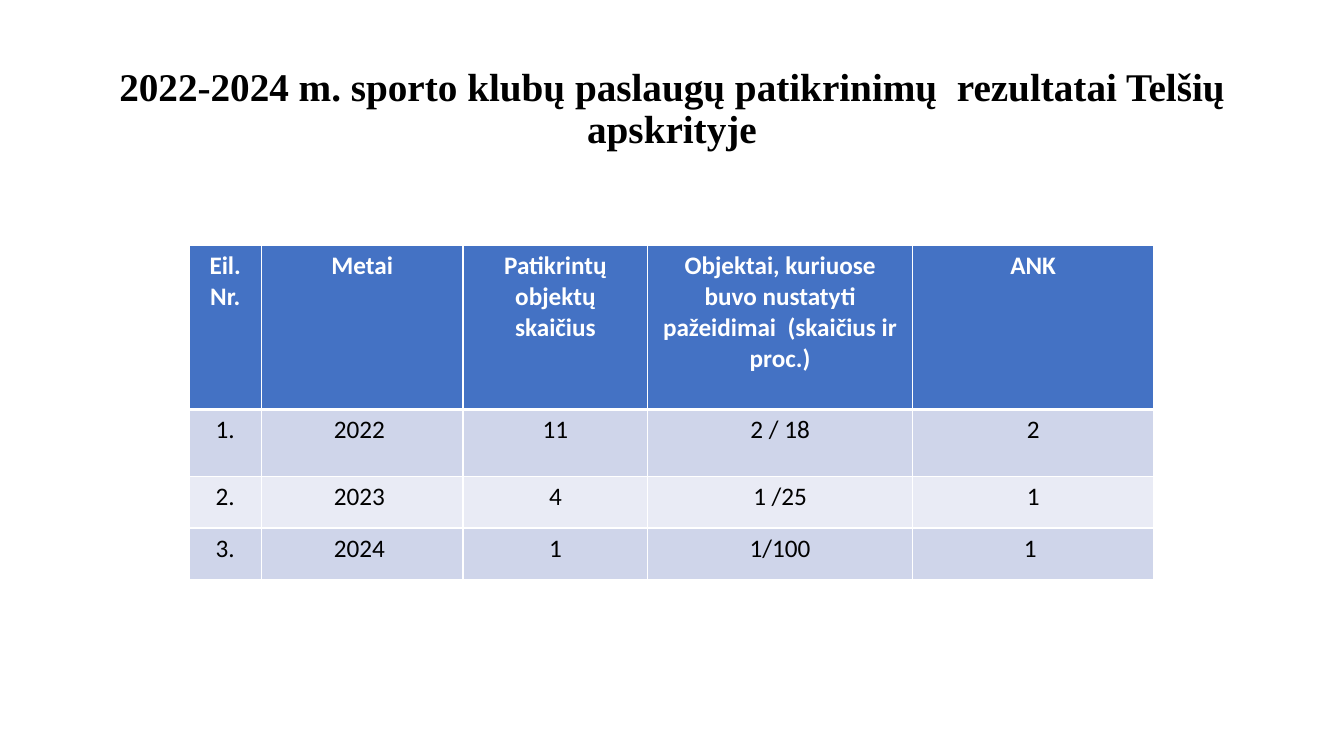
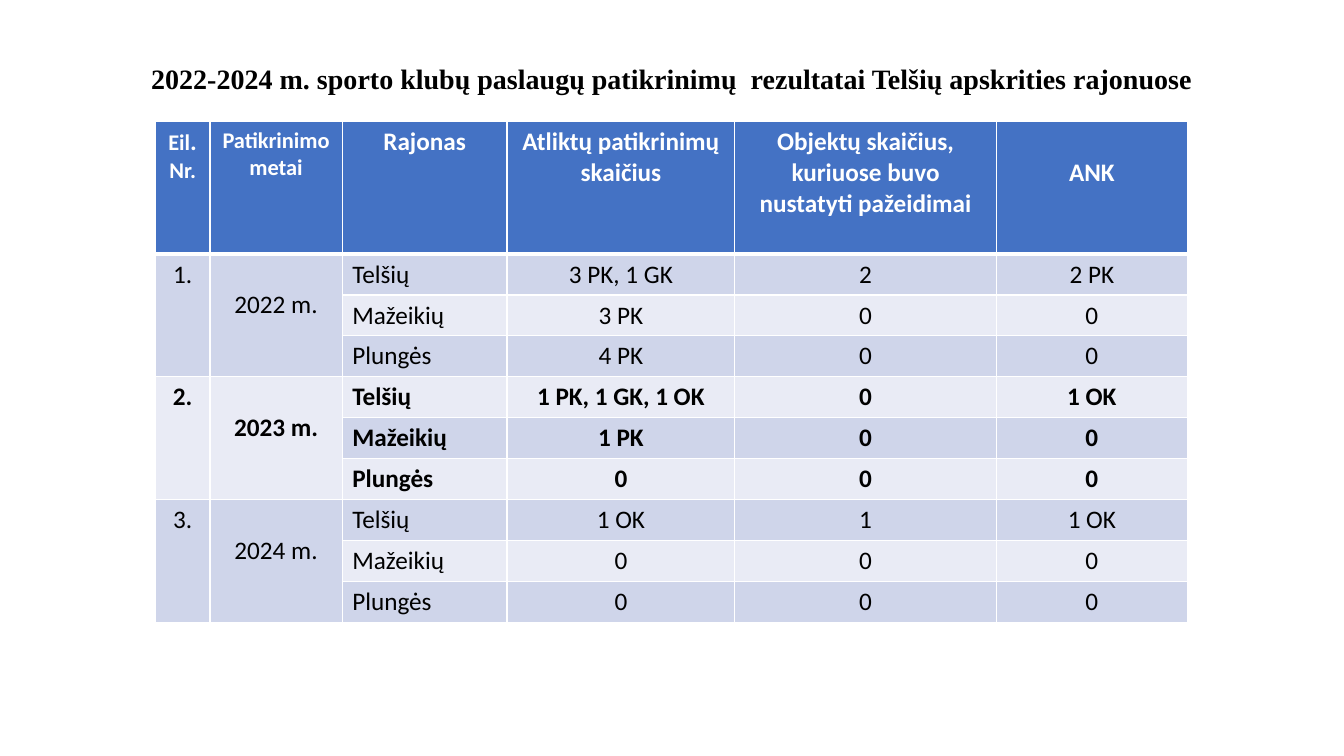
from lxml.etree import SubElement
from pptx import Presentation
from pptx.dml.color import RGBColor
from pptx.enum.text import MSO_ANCHOR as Anchor, PP_ALIGN as Align
from pptx.oxml.ns import qn
from pptx.util import Emu, Pt

EMU_PER_PX = 9525
COLORS = {
    "header": "4472C4",
    "band_dark": "CFD5EA",
    "band_light": "E9EBF5",
    "border": "FFFFFF",
    "header_text": "FFFFFF",
    "text": "000000",
}
TITLE_FONT = "Times New Roman"
TABLE_FONT = "Calibri"
TITLE_ONLY_LAYOUT = 5
LOWERED_MARGIN = 34
ROWS_PER_YEAR = 3

COUNTY_ROWS = [
    ["Eil. Nr.", "Metai", "Patikrintų objektų skaičius",
     "Objektai, kuriuose buvo nustatyti pažeidimai  (skaičius ir proc.)", "ANK"],
    ["1.", "2022 ", "11", "2 / 18", "2"],
    ["2.", "2023 ", "4", "1 /25", "1"],
    ["3.", "2024 ", "1", "1/100", "1 "],
]
DISTRICT_HEADER = [
    "Eil\nNr.", "Patikrinimo\nmetai", "Rajonas", "Atliktų patikrinimų skaičius",
    "Objektų skaičius, kuriuose buvo nustatyti pažeidimai", "ANK",
]
DISTRICT_ROWS = [
    ["1.", "2022 m.", "Telšių", "3 PK, 1 GK", "2", "2 PK"],
    ["", "", "Mažeikių", "3 PK", "0", "0"],
    ["", "", "Plungės", "4 PK", "0", "0"],
    ["2.", "2023 m.", "Telšių", "1 PK, 1 GK, 1 OK", "0", "1 OK"],
    ["", "", "Mažeikių", "1 PK", "0", "0"],
    ["", "", "Plungės", "0", "0", "0"],
    ["3.", "2024 m.", "Telšių", "1 OK", "1", "1 OK"],
    ["", "", "Mažeikių", "0", "0", "0"],
    ["", "", "Plungės", "0", "0", "0"],
]


def px(length):
    return Emu(length * EMU_PER_PX)


def color(name):
    return RGBColor.from_string(COLORS[name])


def style_paragraph(paragraph, font_name, size, color_name, bold):
    paragraph.alignment = Align.CENTER
    font = paragraph.font
    font.name = font_name
    font.size = Pt(size)
    font.bold = bold
    font.color.rgb = color(color_name)


def add_titled_slide(presentation, text, size, height):
    slide = presentation.slides.add_slide(presentation.slide_layouts[TITLE_ONLY_LAYOUT])
    title = slide.shapes.title
    title.left, title.top, title.width, title.height = px(88), px(38), px(1104), px(height)
    title.text_frame.text = text
    title.text_frame.vertical_anchor = Anchor.MIDDLE
    paragraph = title.text_frame.paragraphs[0]
    paragraph.line_spacing = 0.9
    style_paragraph(paragraph, TITLE_FONT, size, "text", True)
    return slide


def set_borders(cell, top, bottom):
    properties = cell._tc.get_or_add_tcPr()
    for side, width in (("L", 1), ("R", 1), ("T", top), ("B", bottom)):
        line = SubElement(properties, qn(f"a:ln{side}"), w=str(Pt(width)))
        fill = SubElement(line, qn("a:solidFill"))
        SubElement(fill, qn("a:srgbClr"), val=COLORS["border"])


def format_cell(cell, row_index, text):
    is_header = row_index == 0
    set_borders(cell, 3 if row_index == 1 else 1, 3 if is_header else 1)
    band = "band_dark" if row_index % 2 else "band_light"
    cell.fill.solid()
    cell.fill.fore_color.rgb = color("header" if is_header else band)
    cell.text = text
    for paragraph in cell.text_frame.paragraphs:
        style_paragraph(paragraph, TABLE_FONT, 18,
                        "header_text" if is_header else "text", is_header)


def add_table(slide, left, top, column_widths, row_heights, rows):
    table = slide.shapes.add_table(
        len(rows), len(column_widths), px(left), px(top),
        px(sum(column_widths)), px(sum(row_heights))).table
    for column, width in zip(table.columns, column_widths):
        column.width = px(width)
    for row, height in zip(table.rows, row_heights):
        row.height = px(height)
    for row_index, texts in enumerate(rows):
        for column_index, text in enumerate(texts):
            format_cell(table.cell(row_index, column_index), row_index, text)
    return table


def format_district_header(table):
    for column_index in (0, 1):
        for paragraph in table.cell(0, column_index).text_frame.paragraphs:
            paragraph.font.size = Pt(16)
    period = table.cell(0, 0).text_frame.paragraphs[0].add_run()
    period.text = "."
    period.font.size = Pt(18)
    table.cell(0, len(DISTRICT_HEADER) - 1).margin_top = px(LOWERED_MARGIN)


def format_year_groups(table):
    for first in range(1, len(DISTRICT_ROWS) + 1, ROWS_PER_YEAR):
        last = first + ROWS_PER_YEAR - 1
        for row_index in range(first, last + 1):
            table.cell(row_index, 2).text_frame.paragraphs[0].alignment = Align.LEFT
        for column_index in (0, 1):
            table.cell(first, column_index).merge(table.cell(last, column_index))
        table.cell(first, 1).margin_top = px(LOWERED_MARGIN)


def embolden_rows(table, row_indexes):
    for row_index in row_indexes:
        for cell in table.rows[row_index].cells:
            cell.text_frame.paragraphs[0].font.bold = True


def add_county_slide(presentation):
    slide = add_titled_slide(
        presentation,
        "2022-2024 m. sporto klubų paslaugų patikrinimų  rezultatai Telšių apskrityje",
        28, 133)
    add_table(slide, 180, 234, [69, 192, 176, 252, 230], [156, 64, 49, 49], COUNTY_ROWS)


def add_district_slide(presentation):
    slide = add_titled_slide(
        presentation,
        "2022-2024 m. sporto klubų paslaugų patikrinimų  rezultatai Telšių apskrities rajonuose",
        20, 78)
    table = add_table(slide, 148, 116, [52, 126, 157, 217, 249, 182],
                      [126] + [39] * len(DISTRICT_ROWS), [DISTRICT_HEADER] + DISTRICT_ROWS)
    format_district_header(table)
    format_year_groups(table)
    embolden_rows(table, range(4, 7))


def main():
    presentation = Presentation()
    presentation.slide_width, presentation.slide_height = px(1280), px(720)
    add_county_slide(presentation)
    add_district_slide(presentation)
    presentation.save("out.pptx")


if __name__ == "__main__":
    main()
